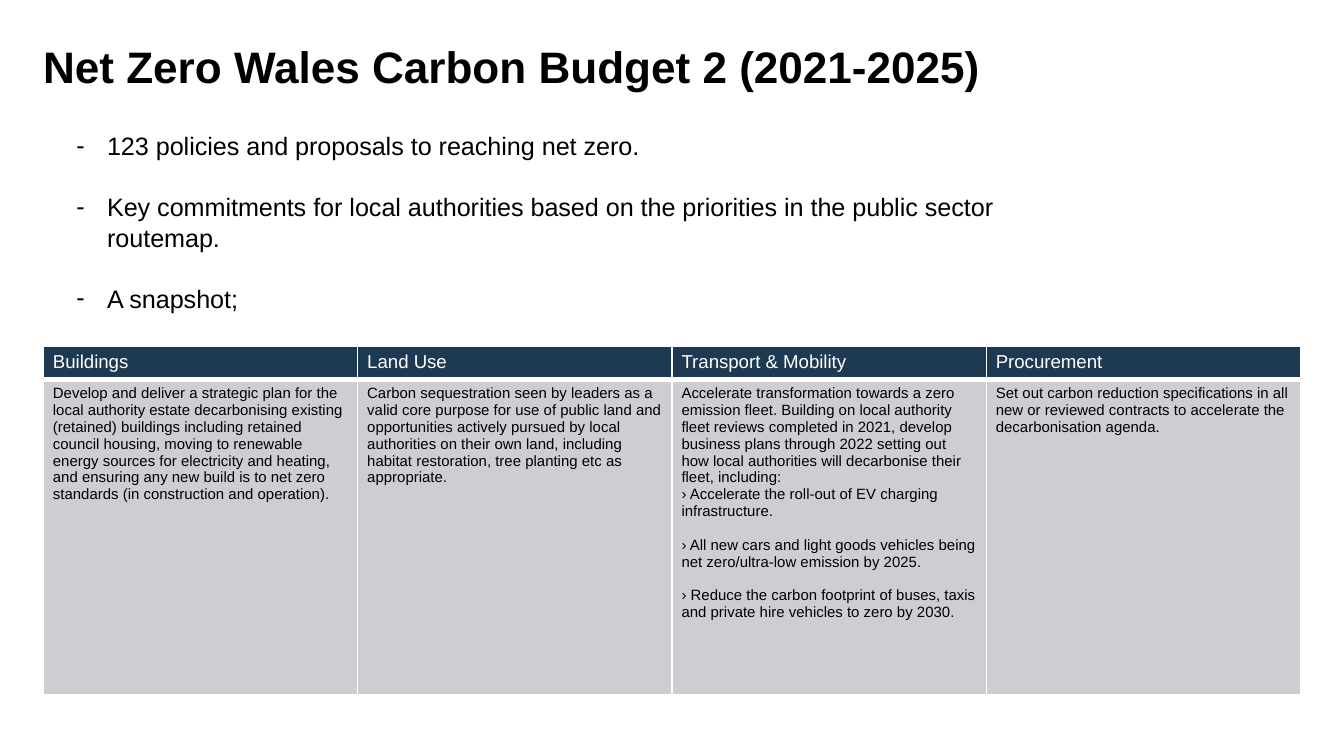
from lxml.etree import SubElement
from pptx import Presentation
from pptx.dml.color import RGBColor
from pptx.enum.text import MSO_ANCHOR, MSO_AUTO_SIZE, PP_ALIGN
from pptx.oxml.ns import qn
from pptx.util import Cm, Pt

BLACK = RGBColor(0x00, 0x00, 0x00)
WHITE = RGBColor(0xFF, 0xFF, 0xFF)
NAVY = RGBColor(0x1E, 0x39, 0x52)
GREY = RGBColor(0xCD, 0xCE, 0xD1)

POINTS = [
    "123 policies and proposals to reaching net zero.",
    "Key commitments for local authorities based on the priorities in the "
    "public sector routemap.",
    "A snapshot;",
]
THEMES = {
    "Buildings": [
        "Develop and deliver a strategic plan for the local authority estate "
        "decarbonising existing (retained) buildings including retained council "
        "housing, moving to renewable energy sources for electricity and heating, "
        "and ensuring any new build is to net zero standards (in construction "
        "and operation)."],
    "Land Use": [
        "Carbon sequestration seen by leaders as a valid core purpose for use of "
        "public land and opportunities actively pursued by local authorities on "
        "their own land, including habitat restoration, tree planting etc as "
        "appropriate."],
    "Transport & Mobility": [
        "Accelerate transformation towards a zero emission fleet. Building on "
        "local authority fleet reviews completed in 2021, develop business plans "
        "through 2022 setting out how local authorities will decarbonise their "
        "fleet, including:",
        "› Accelerate the roll-out of EV charging infrastructure.",
        "› All new cars and light goods vehicles being net zero/ultra-low "
        "emission by 2025.",
        "› Reduce the carbon footprint of buses, taxis and private hire vehicles "
        "to zero by 2030."],
    "Procurement": [
        "Set out carbon reduction specifications in all new or reviewed contracts "
        "to accelerate the decarbonisation agenda."],
}


def add_run(para, text, size, color, bold=False):
    run = para.add_run()
    run.text = text
    run.font.name = "Arial"
    run.font.size = Pt(size)
    run.font.bold = bold
    run.font.color.rgb = color


def set_edge(cell, side, width):
    """Draw one white border; call before filling the cell."""
    line = SubElement(cell._tc.get_or_add_tcPr(), qn("a:" + side), w=str(Pt(width)))
    fill = SubElement(line, qn("a:solidFill"))
    SubElement(fill, qn("a:srgbClr"), val=str(WHITE))


prs = Presentation()
prs.slide_width, prs.slide_height = Cm(25.4), Cm(14.29)
slide = prs.slides.add_slide(prs.slide_layouts[1])
title, body = slide.placeholders

# Title
title.left, title.top, title.width, title.height = Cm(0.56), Cm(0.3), Cm(20.17), Cm(2.03)
frame = title.text_frame
frame.auto_size = MSO_AUTO_SIZE.NONE
frame.vertical_anchor = MSO_ANCHOR.MIDDLE
para = frame.paragraphs[0]
para.alignment = PP_ALIGN.LEFT
para.line_spacing = 0.9
add_run(para, "Net Zero Wales Carbon Budget 2 (2021-2025)", 23.6, BLACK, True)

# Key points
body.left, body.top, body.width, body.height = Cm(1.19), Cm(2.34), Cm(19.96), Cm(3.71)
frame = body.text_frame
frame.auto_size = MSO_AUTO_SIZE.NONE
for i, text in enumerate(POINTS):
    para = frame.add_paragraph() if i else frame.paragraphs[0]
    props = para._p.get_or_add_pPr()
    props.set("marL", str(Cm(0.58)))
    props.set("indent", str(-Cm(0.58)))
    SubElement(props, qn("a:buFont"), typeface="Arial")
    SubElement(props, qn("a:buChar"), char="-")
    para.line_spacing = Pt(16.3)
    para.space_before = Pt(16.3 if i else 0)
    add_run(para, text, 13.5, BLACK)

# Commitments by theme
table = slide.shapes.add_table(
    2, len(THEMES), Cm(0.82), Cm(6.54), Cm(23.76), Cm(6.6)).table
table.rows[0].height, table.rows[1].height = Cm(0.64), Cm(5.96)
for col, (theme, paras) in enumerate(THEMES.items()):
    table.columns[col].width = Cm(5.94)
    rows = [([theme], 10, WHITE, NAVY, 3), (paras, 8, BLACK, GREY, 1)]
    for row, (texts, size, color, back, base) in enumerate(rows):
        cell = table.cell(row, col)
        cell.margin_left = cell.margin_right = Cm(0.18)
        cell.margin_top = cell.margin_bottom = Cm(0.1)
        for side, width in (("lnL", 1), ("lnR", 1), ("lnT", 1), ("lnB", base)):
            set_edge(cell, side, width)
        cell.fill.solid()
        cell.fill.fore_color.rgb = back
        for i, text in enumerate(texts):
            para = cell.text_frame.add_paragraph() if i else cell.text_frame.paragraphs[0]
            para.space_before = Pt(9 if i > 1 else 0)
            add_run(para, text, size, color)

prs.save("out.pptx")
